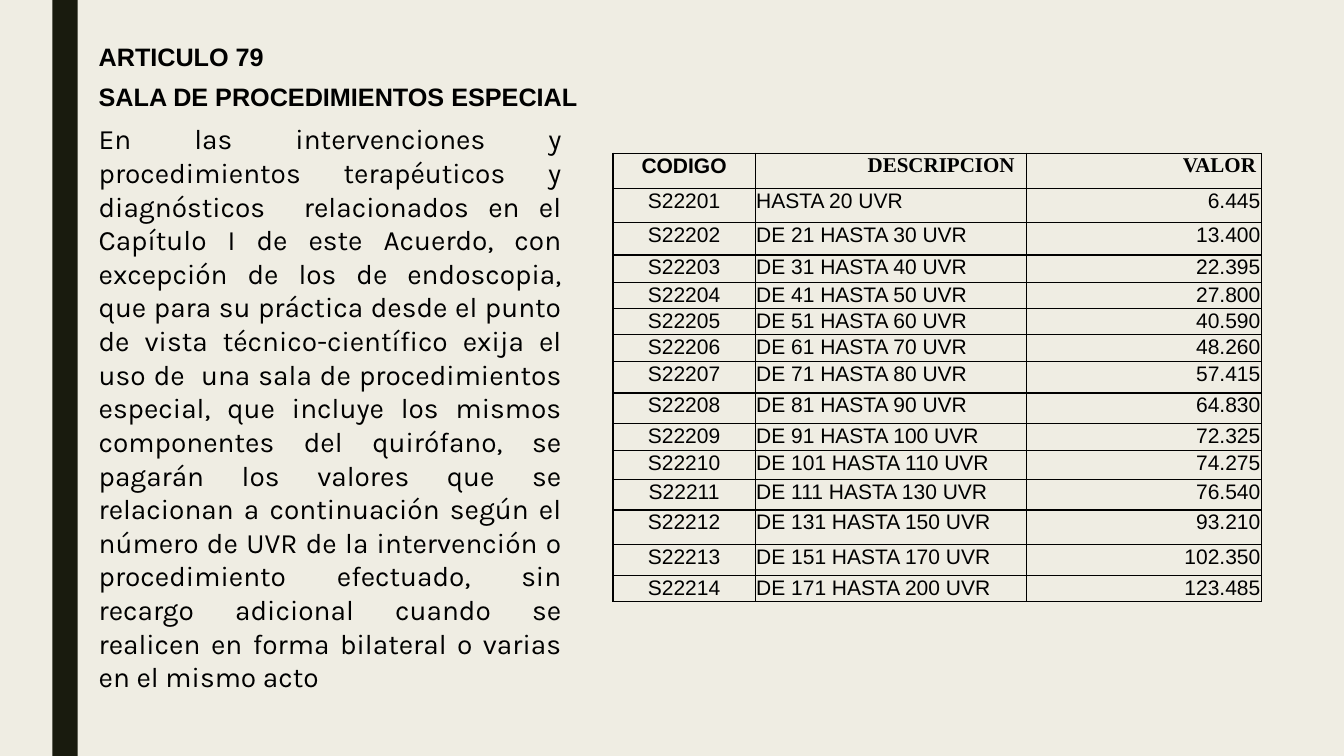
from lxml import etree
from pptx import Presentation
from pptx.dml.color import RGBColor
from pptx.enum.shapes import MSO_SHAPE
from pptx.enum.text import MSO_AUTO_SIZE, PP_ALIGN
from pptx.oxml.ns import qn
from pptx.util import Inches, Pt

RECT = MSO_SHAPE.RECTANGLE
GROW = MSO_AUTO_SIZE.SHAPE_TO_FIT_TEXT
LEFT, MID = PP_ALIGN.LEFT, PP_ALIGN.CENTER
RIGHT, FULL = PP_ALIGN.RIGHT, PP_ALIGN.JUSTIFY

PAPER, DARK, BLACK = "EFEDE3", "191B0E", "000000"
SANS, SERIF, BODY = "Arial", "Times New Roman", "Karla"

WIDE, HIGH = Inches(13.33), Inches(7.5)
EDGE = 6.6
COLS = [10.58, 20.18, 17.48]
ROWS = [4.67, 4.53, 4.27, 3.6, 3.2, 3.33, 3.6, 4.13,
        4, 3.6, 3.87, 4, 4.53, 4.13, 3.47]
HEADS = [("CODIGO", SANS, 0), ("DESCRIPCION", SERIF, 1), ("VALOR", SERIF, 2)]
INDENT = [0, 7.5, 11.25]
RATES = [
    ("HASTA 20 UVR", "6.445"),
    ("DE 21 HASTA 30 UVR", "13.400"),
    ("DE 31 HASTA 40 UVR", "22.395"),
    ("DE 41 HASTA 50 UVR", "27.800"),
    ("DE 51 HASTA 60 UVR", "40.590"),
    ("DE 61 HASTA 70 UVR", "48.260"),
    ("DE 71 HASTA 80 UVR", "57.415"),
    ("DE 81 HASTA 90 UVR", "64.830"),
    ("DE 91 HASTA 100 UVR", "72.325"),
    ("DE 101 HASTA 110 UVR", "74.275"),
    ("DE 111 HASTA 130 UVR", "76.540"),
    ("DE 131 HASTA 150 UVR", "93.210"),
    ("DE 151 HASTA 170 UVR", "102.350"),
    ("DE 171 HASTA 200 UVR", "123.485"),
]
STORY = (
    "En las intervenciones y procedimientos terapéuticos y diagnósticos  "
    "relacionados en el Capítulo I de este Acuerdo, con excepción de los de "
    "endoscopia, que para su práctica desde el punto de vista "
    "técnico-científico exija el uso de  una sala de procedimientos especial, "
    "que incluye los mismos componentes del quirófano, se pagarán los valores "
    "que se relacionan a continuación según el número de UVR de la "
    "intervención o procedimiento efectuado, sin recargo adicional cuando se "
    "realicen en forma bilateral o varias en el mismo acto"
)


def color(code):
    return RGBColor.from_string(code)


def across(part):
    return round(WIDE * part / 100)


def down(part):
    return round(HIGH * part / 100)


def place(x, y, w, h):
    return across(x), down(y), across(w), down(h)


def write(frame, text, size=15, font=SANS, bold=False, align=LEFT, level=0):
    para = frame.paragraphs[0]
    para.alignment = align
    para.level = level
    if level:
        props = para._p.get_or_add_pPr()
        props.set("marL", str(across(INDENT[level])))
        props.set("indent", "0")
    run = para.add_run()
    run.text = text
    run.font.size = Pt(size)
    run.font.name = font
    run.font.bold = bold
    run.font.color.rgb = color(BLACK)


def add_bar(slide, spot, fill):
    bar = slide.shapes.add_shape(RECT, *spot)
    bar.shadow.inherit = False
    bar.fill.solid()
    bar.fill.fore_color.rgb = color(fill)
    bar.line.fill.background()


def add_text(slide, spot, text, wrap=False, **style):
    frame = slide.shapes.add_textbox(*spot).text_frame
    frame.word_wrap = wrap
    frame.auto_size = GROW
    write(frame, text, **style)


def frame_cell(cell):
    props = cell._tc.get_or_add_tcPr()
    for side in ("a:lnL", "a:lnR", "a:lnT", "a:lnB"):
        line = etree.SubElement(props, qn(side), w=str(Pt(1)))
        fill = etree.SubElement(line, qn("a:solidFill"))
        etree.SubElement(fill, qn("a:srgbClr"), val=BLACK)


def fill_cell(cell, text, **style):
    cell.margin_left = cell.margin_right = cell.margin_top = Inches(0.01)
    cell.margin_bottom = 0
    frame_cell(cell)
    cell.fill.background()
    write(cell.text_frame, text, **style)


def add_rates(slide, x, y):
    spot = place(x, y, sum(COLS), sum(ROWS))
    table = slide.shapes.add_table(len(ROWS), len(COLS), *spot).table
    table.first_row = table.horz_banding = False
    for col, part in zip(table.columns, COLS):
        col.width = across(part)
    for row, part in zip(table.rows, ROWS):
        row.height = down(part)
    for c, (text, font, level) in enumerate(HEADS):
        fill_cell(table.cell(0, c), text, font=font, bold=True,
                  align=MID, level=level)
    for r, (range_, value) in enumerate(RATES, 1):
        texts = (f"S222{r:02}", range_, value)
        for c, (text, align) in enumerate(zip(texts, (MID, LEFT, RIGHT))):
            fill_cell(table.cell(r, c), text, align=align)


def main():
    deck = Presentation()
    deck.slide_width, deck.slide_height = WIDE, HIGH
    slide = deck.slides.add_slide(deck.slide_layouts[6])
    back = slide.background.fill
    back.solid()
    back.fore_color.rgb = color(PAPER)
    add_bar(slide, place(3.9, 0, 1.88, 100), DARK)
    add_text(slide, place(EDGE, 4.8, 13.95, 5.33), "ARTICULO 79",
             size=18, bold=True)
    add_text(slide, place(EDGE, 10.13, 37.5, 5.33),
             "SALA DE PROCEDIMIENTOS ESPECIAL", size=18, bold=True)
    add_rates(slide, 45.61, 20.27)
    add_text(slide, place(EDGE, 15.47, 35.93, 68.93), STORY, wrap=True,
             size=20, font=BODY, align=FULL)
    deck.save("out.pptx")


if __name__ == "__main__":
    main()
